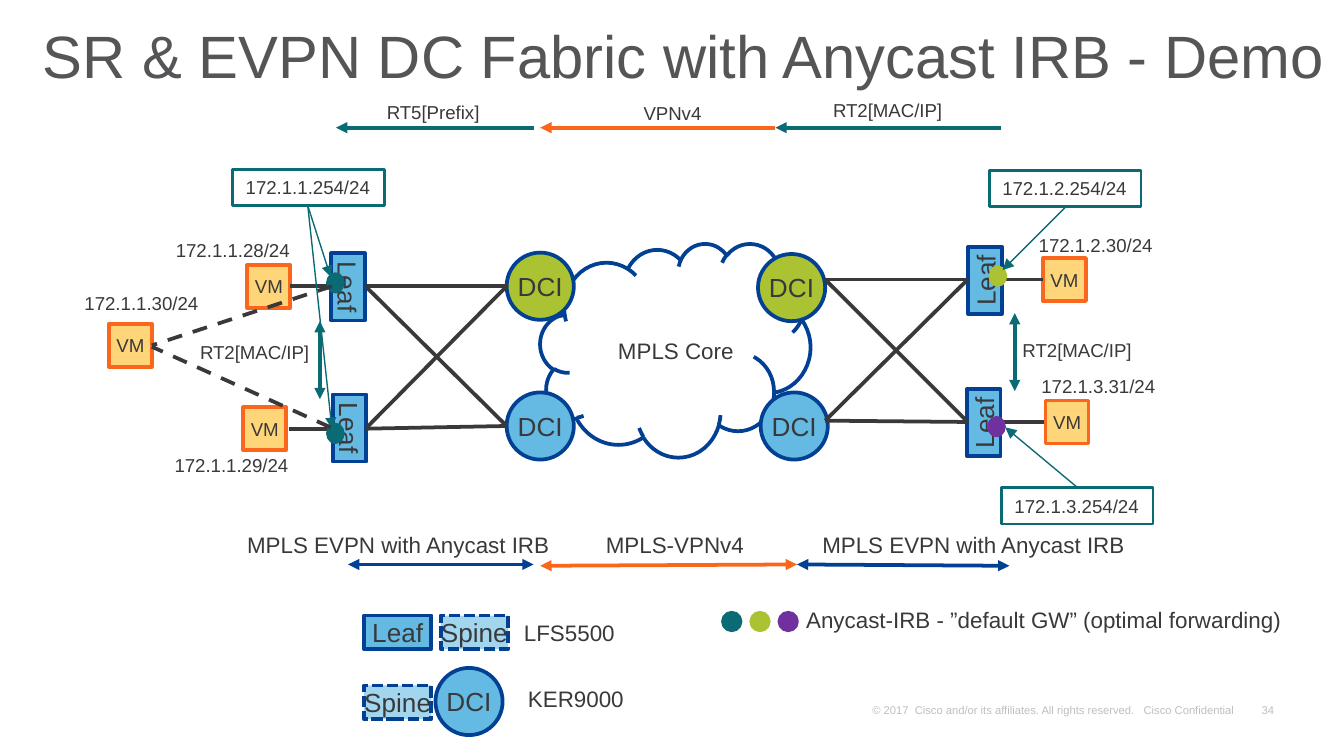
from lxml import etree
from pptx import Presentation
from pptx.dml.color import RGBColor
from pptx.enum import dml, shapes, text
from pptx.oxml.ns import qn
from pptx.util import Inches, Pt

INK = RGBColor(0x39, 0x39, 0x3B)
TITLE = RGBColor(0x55, 0x55, 0x58)
FOOTER = RGBColor(0xBF, 0xBF, 0xBF)
NAVY = RGBColor(0x01, 0x40, 0x93)
SKY = RGBColor(0x64, 0xBA, 0xE2)
PALE = RGBColor(0xA2, 0xD6, 0xEE)
LIME = RGBColor(0xAB, 0xC3, 0x33)
TEAL = RGBColor(0x0B, 0x6B, 0x75)
PURPLE = RGBColor(0x70, 0x30, 0xA0)
ORANGE = RGBColor(0xFA, 0x66, 0x1C)
YELLOW = RGBColor(0xFF, 0xD5, 0x79)

SHAPE = shapes.MSO_SHAPE
MIDDLE, BOTTOM = text.MSO_ANCHOR.MIDDLE, text.MSO_ANCHOR.BOTTOM
LEFT, CENTER, RIGHT = text.PP_ALIGN.LEFT, text.PP_ALIGN.CENTER, text.PP_ALIGN.RIGHT
GROW = text.MSO_AUTO_SIZE.SHAPE_TO_FIT_TEXT
DASH, SHORT_DASH = dml.MSO_LINE.DASH, dml.MSO_LINE.SQUARE_DOT
TIGHT = dict(margin_left=Inches(0.07), margin_right=Inches(0.07),
             margin_top=Inches(0.03), margin_bottom=Inches(0.03))


def apply(obj, fmt):
    for name, value in fmt.items():
        setattr(obj, name, value)


def write(sp, words, size, color=INK, align=LEFT, spacing=None, **frame):
    tf = sp.text_frame
    apply(tf, {"word_wrap": False, **frame})
    p = tf.paragraphs[0]
    apply(p, {"alignment": align, "line_spacing": spacing})
    r = p.add_run()
    r.text = words
    apply(r.font, {"name": "Arial", "size": Pt(size)})
    r.font.color.rgb = color


def label(s, words, x, y, w, h=0.27, size=10, **fmt):
    sp = s.shapes.add_textbox(Inches(x), Inches(y), Inches(w), Inches(h))
    write(sp, words, size, **{"auto_size": GROW, **fmt})


def box(s, kind, x, y, w, h, fill, line, width=2, dash=None):
    sp = s.shapes.add_shape(kind, Inches(x), Inches(y), Inches(w), Inches(h))
    sp.shadow.inherit = False
    if fill is None:
        sp.fill.background()
    else:
        sp.fill.solid()
        sp.fill.fore_color.rgb = fill
    sp.line.color.rgb = line
    apply(sp.line, {"width": Pt(width), "dash_style": dash})
    return sp


def node(s, words, x, y, w=0.5, h=0.25, kind=SHAPE.RECTANGLE, fill=SKY,
         line=NAVY, size=14, dash=None, turn=0):
    sp = box(s, kind, x, y, w, h, fill, line, dash=dash)
    sp.rotation = turn
    write(sp, words, size, align=CENTER, vertical_anchor=MIDDLE)


def dci(s, x, y, fill=SKY):
    node(s, "DCI", x, y, h=0.5, kind=SHAPE.OVAL, fill=fill)


def vm(s, x, y):
    node(s, "VM", x, y, 0.32, 0.32, fill=YELLOW, line=ORANGE, size=10)


def dot(s, x, y, color, w=0.11):
    box(s, SHAPE.OVAL, x, y, w, 0.13, color, color)


def gateway(s, words, x, y):
    sp = box(s, SHAPE.RECTANGLE, x, y, 1.13, 0.27, None, TEAL, 1.5)
    write(sp, words, 10, auto_size=GROW, vertical_anchor=text.MSO_ANCHOR.TOP)


def link(s, start, end, color=INK, width=2, dash=None, ends=()):
    c = s.shapes.add_connector(shapes.MSO_CONNECTOR.STRAIGHT,
                               *map(Inches, start + end))
    c.line.color.rgb = color
    apply(c.line, {"width": Pt(width), "dash_style": dash})
    ln = c._element.spPr.find(qn("a:ln"))
    for tag in ends:
        etree.SubElement(ln, qn(tag), type="triangle")
    etree.SubElement(c._element.spPr, qn("a:effectLst"))


def arrow(s, start, end, color=TEAL, width=2, both=False):
    ends = ("a:headEnd", "a:tailEnd") if both else ("a:tailEnd",)
    link(s, start, end, color, width, ends=ends)


def main():
    prs = Presentation()
    prs.slide_width, prs.slide_height = Inches(10), Inches(10) * 9 // 16
    s = prs.slides.add_slide(prs.slide_layouts[6])

    # Title and footer
    label(s, "SR & EVPN DC Fabric with Anycast IRB - Demo", 0.22, 0.04, 9.78, 0.84,
          32, color=TITLE, spacing=0.8, word_wrap=True, vertical_anchor=MIDDLE,
          auto_size=text.MSO_AUTO_SIZE.NONE)
    label(s, "34", 9.31, 5.19, 0.24, 0.17, 6, color=FOOTER, align=RIGHT,
          vertical_anchor=BOTTOM, **TIGHT)
    label(s, "© 2017  Cisco and/or its affiliates. All rights reserved."
          "   Cisco Confidential", 6.42, 5.19, 2.91, 0.17, 6, color=FOOTER,
          word_wrap=True, vertical_anchor=BOTTOM, **TIGHT)

    # Core and devices
    label(s, "MPLS Core", 4.5, 2.46, 1.07, 0.3, 12)
    box(s, SHAPE.CLOUD, 4.02, 1.81, 2.01, 1.59, None, NAVY)
    for x, y, fill in ((3.77, 1.88, LIME), (3.77, 2.92, SKY),
                       (5.64, 1.89, LIME), (5.66, 2.92, SKY)):
        dci(s, x, y, fill)
    for x, y, turn in ((2.34, 2.01, 90), (2.35, 3.06, 90),
                       (7.08, 1.96, 270), (7.07, 3.02, 270)):
        node(s, "Leaf", x, y, turn=turn)
    for x, y in ((0.81, 2.41), (1.84, 1.97), (1.81, 3.03), (7.76, 1.92), (7.78, 2.98)):
        vm(s, x, y)

    # Full mesh between DCI and leaf on each side
    for dci_x, dci_ys, leaf_x, leaf_ys in ((3.77, (2.13, 3.17), 2.72, (2.13, 3.19)),
                                           (6.14, (2.08, 3.13), 7.2, (2.08, 3.14))):
        for dci_y in dci_ys:
            for leaf_y in leaf_ys:
                link(s, (dci_x, dci_y), (leaf_x, leaf_y))

    # Links from leaf to VM
    for leaf_x, vm_x, y in ((2.47, 2.16, 2.13), (2.48, 2.15, 3.19),
                            (7.45, 7.76, 2.08), (7.44, 7.77, 3.14)):
        link(s, (leaf_x, y), (vm_x, y))

    # Anycast gateways
    for x, y, color in ((2.44, 2.04, TEAL), (2.44, 3.16, TEAL),
                        (7.37, 1.99, LIME), (7.36, 3.11, PURPLE)):
        dot(s, x, y, color)
    for words, x, y in (("172.1.1.254/24", 1.73, 1.26), ("172.1.2.254/24", 7.36, 1.27),
                        ("172.1.3.254/24", 7.45, 3.63)):
        gateway(s, words, x, y)
    for start, end in (((2.29, 1.53), (2.46, 2.06)), ((2.29, 1.53), (2.47, 3.19)),
                       ((7.93, 1.54), (7.46, 2.01)), ((8.02, 3.63), (7.48, 3.18))):
        arrow(s, start, end, width=0.75)

    # Dual-homed VM
    link(s, (2.47, 2.13), (1.13, 2.57), dash=DASH)
    link(s, (2.46, 3.18), (1.13, 2.58), dash=DASH)

    # VM addresses
    for words, x, y in (("172.1.1.28/24", 1.21, 1.73), ("172.1.1.29/24", 1.2, 3.33),
                        ("172.1.1.30/24", 0.53, 2.12), ("172.1.2.30/24", 7.63, 1.69),
                        ("172.1.3.31/24", 7.65, 2.74)):
        label(s, words, x, y, 1.05)

    # Route advertisements along the top
    for words, x, y, w, start, end, color in (
            ("RT5[Prefix]", 2.78, 0.7, 0.9, 3.97, 2.5, TEAL),
            ("VPNv4", 4.69, 0.71, 0.64, 5.77, 4.02, ORANGE),
            ("RT2[MAC/IP]", 6.1, 0.69, 1.03, 7.45, 5.77, TEAL)):
        arrow(s, (start, 0.95), (end, 0.95), color)
        label(s, words, x, y, w, word_wrap=True)

    # Route exchange between leaf pairs
    for x, top, text_x, text_y in ((2.38, 2.39, 1.39, 2.49), (7.55, 2.33, 7.51, 2.47)):
        arrow(s, (x, top), (x, top + 0.58), both=True)
        label(s, "RT2[MAC/IP]", text_x, text_y, 1.03)

    # Transport domains
    for words, x, w, start, end, color in (
            ("MPLS EVPN with Anycast IRB", 1.74, 2.47, (3.97, 4.2), (2.59, 4.2), NAVY),
            ("MPLS-VPNv4", 4.41, 1.24, (5.93, 4.2), (4.02, 4.21), ORANGE),
            ("MPLS EVPN with Anycast IRB", 6.02, 2.47, (7.51, 4.21), (5.93, 4.2), NAVY)):
        arrow(s, start, end, color, both=True)
        label(s, words, x, 3.9, w, 0.3, 12)

    # Legend
    for i, color in enumerate((TEAL, LIME, PURPLE)):
        dot(s, 5.38 + 0.21 * i, 4.56, color, 0.13)
    label(s, "Anycast-IRB - ”default GW” (optimal forwarding)", 5.9, 4.46, 3.77, 0.3, 12)
    node(s, "Leaf", 2.71, 4.58)
    dci(s, 3.24, 4.97)
    for x, y in ((3.28, 4.58), (2.71, 5.1)):
        node(s, "Spine", x, y, fill=PALE, dash=SHORT_DASH)
    label(s, "LFS5500", 3.8, 4.56, 0.93, 0.3, 12)
    label(s, "KER9000", 3.83, 5.05, 0.92, 0.3, 12)

    prs.save("out.pptx")


if __name__ == "__main__":
    main()
